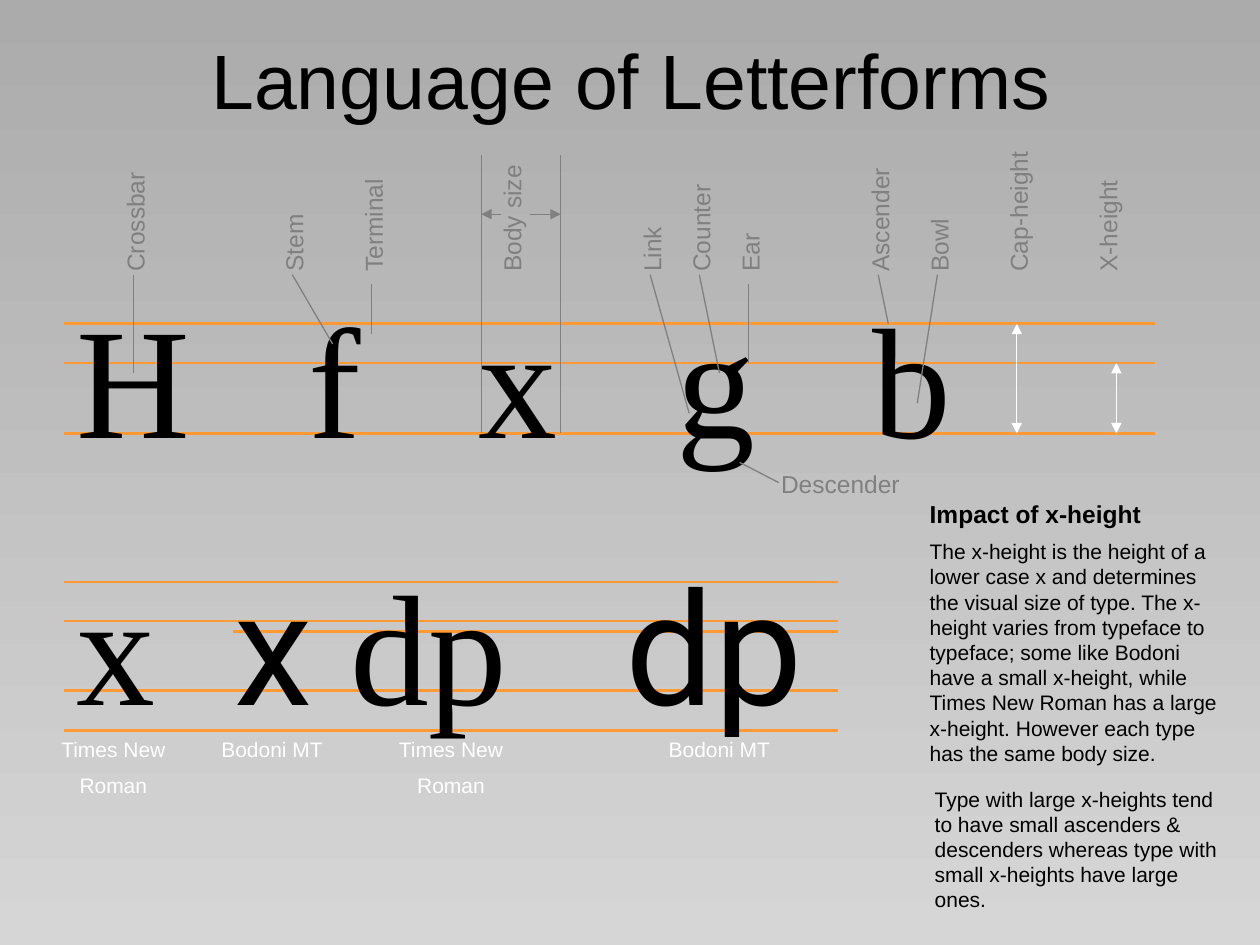
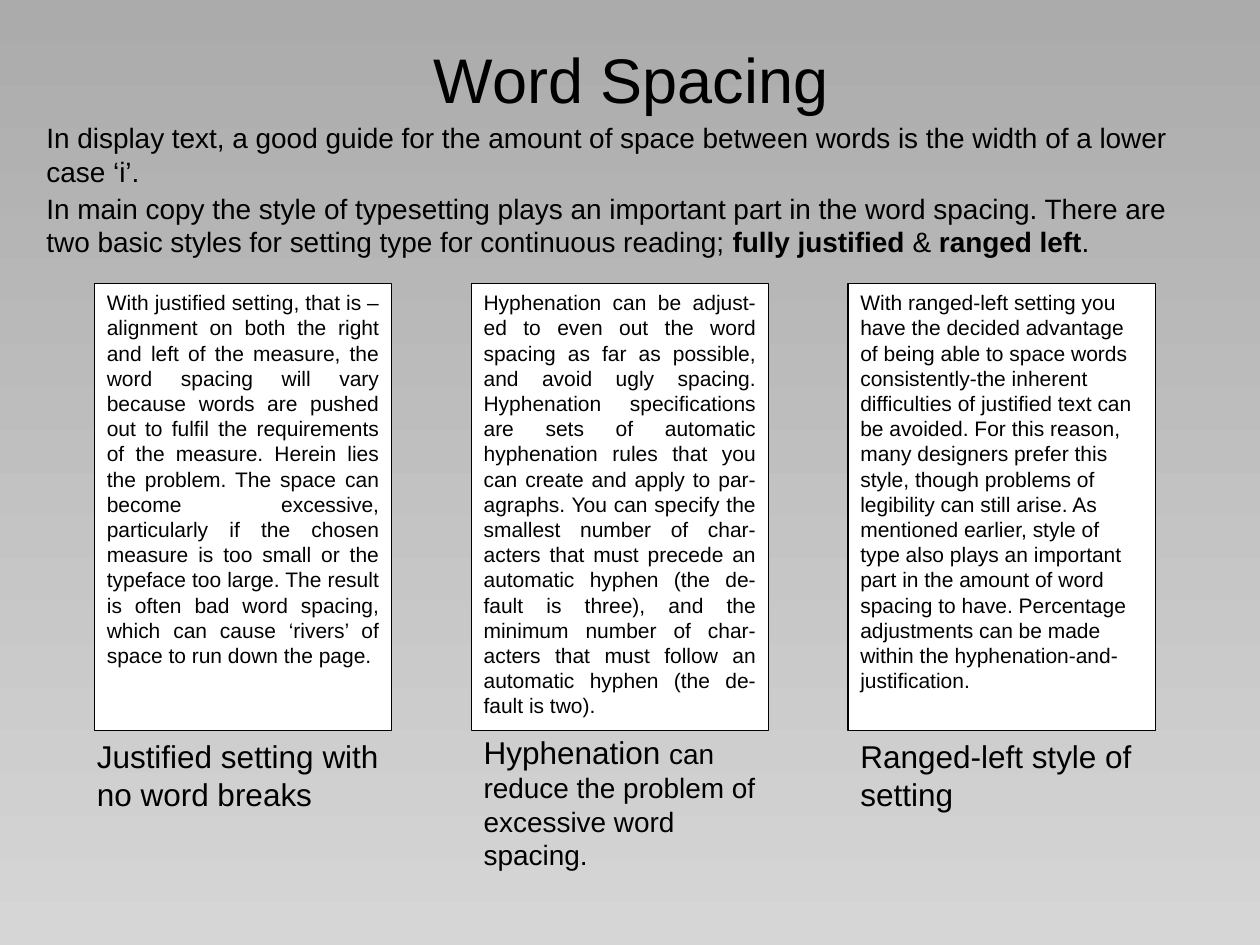
import pptx
import pptx.util
import pptx.dml.color
import pptx.enum.dml
import pptx.enum.shapes
import pptx.enum.text
from dataclasses import dataclass
from lxml import etree
from pptx.util import Inches, Pt

RGBColor = pptx.dml.color.RGBColor
BLACK = RGBColor(0, 0, 0)
WHITE = RGBColor(255, 255, 255)
GREY = RGBColor(0x80, 0x80, 0x80)
ORANGE = RGBColor(0xFF, 0x99, 0x33)
SKY_TOP = RGBColor(0xAB, 0xAB, 0xAB)
SKY_BOTTOM = RGBColor(0xD6, 0xD6, 0xD6)

SANS, SERIF, ROBOTO = "Arial", "Times New Roman", "Roboto"
ALIGN = pptx.enum.text.PP_ALIGN
ANCHOR = pptx.enum.text.MSO_ANCHOR
TITLE_ONLY = 5
LINE_HEIGHT = 1.2
DRAWING_NS = "http://schemas.openxmlformats.org/drawingml/2006/main"


def add_child(parent, tag, **attributes):
    """Append a DrawingML element to its parent."""
    child = etree.SubElement(parent, f"{{{DRAWING_NS}}}{tag}")
    for key, value in attributes.items():
        child.set(key, str(value))
    return child


def write(frame, paragraphs, size=12, color=BLACK, font=SANS, align=ALIGN.LEFT,
          anchor=ANCHOR.TOP, tabs=()):
    """Fill a text frame; a paragraph is a string or a list of (text, format) runs."""
    frame.word_wrap = True
    frame.vertical_anchor = anchor
    for index, content in enumerate(paragraphs):
        paragraph = frame.paragraphs[0] if index == 0 else frame.add_paragraph()
        runs = [(content, {})] if isinstance(content, str) else content
        line_size = runs[-1][1].get("size", size)
        paragraph.alignment = align
        paragraph.line_spacing = Pt(line_size * LINE_HEIGHT)
        paragraph.space_before = Pt(line_size / 2 if index else 0)
        if tabs:
            tab_list = add_child(paragraph._p.get_or_add_pPr(), "tabLst")
            for stop in tabs:
                add_child(tab_list, "tab", pos=Inches(stop), algn="l")
        for text, style in runs:
            run = paragraph.add_run()
            run.text = text
            run.font.name = style.get("font", font)
            run.font.size = Pt(style.get("size", size))
            run.font.bold = style.get("bold", False)
            run.font.color.rgb = color


@dataclass
class Region:
    """A part of a slide whose contents are placed from its top left corner."""
    slide: object
    left: float
    top: float

    def box(self, x, y, width, height):
        """Return the slide position and size of a box in this region."""
        return [Inches(n) for n in (self.left + x, self.top + y, width, height)]

    def text(self, x, y, width, height, *paragraphs, rotation=0, **style):
        """Add a text box."""
        box = self.slide.shapes.add_textbox(*self.box(x, y, width, height))
        box.rotation = rotation
        write(box.text_frame, paragraphs, **style)

    def panel(self, x, y, width, height, *paragraphs, **style):
        """Add a white outlined rectangle with text."""
        panel = self.slide.shapes.add_shape(
            pptx.enum.shapes.MSO_SHAPE.RECTANGLE, *self.box(x, y, width, height))
        panel.shadow.inherit = False
        panel.fill.solid()
        panel.fill.fore_color.rgb = WHITE
        panel.line.color.rgb = BLACK
        panel.line.width = Pt(0.75)
        write(panel.text_frame, paragraphs, **style)

    def line(self, x1, y1, x2, y2, color=GREY, width=0.75, arrows=()):
        """Add a straight line with arrowheads at the named ends."""
        line = self.slide.shapes.add_connector(
            pptx.enum.shapes.MSO_CONNECTOR.STRAIGHT,
            *self.box(x1, y1, self.left + x2, self.top + y2))
        line.line.color.rgb = color
        line.line.width = Pt(width)
        for end in arrows:
            add_child(line.line._get_or_add_ln(), end, type="triangle")
        add_child(line._element.spPr, "effectLst")


def set_background(master):
    """Give every slide the grey gradient."""
    fill = master.background.fill
    fill.gradient()
    fill.gradient_angle = 270
    for stop, color, position in zip(fill.gradient_stops, (SKY_TOP, SKY_BOTTOM), (0, 1)):
        stop.color.rgb = color
        stop.position = position


def add_titled_slide(deck, title, size):
    """Add a slide with the shared title style."""
    slide = deck.slides.add_slide(deck.slide_layouts[TITLE_ONLY])
    heading = slide.shapes.title
    heading.left, heading.top, heading.width, heading.height = (
        Inches(n) for n in (0.51, 0, 9, 1.25))
    write(heading.text_frame, [title], size=size, align=ALIGN.CENTER, anchor=ANCHOR.MIDDLE)
    return slide


def letter_anatomy(region):
    """Draw the labelled letters, measured from the left end of the cap line."""
    x_line, baseline = 0.31, 0.87
    for y in (0, x_line, baseline):
        region.line(0, y, 8.66, y, color=ORANGE, width=1.5)
    region.text(0, -0.39, 8.98, 1.6, "H\tf\tx\tg\tb", size=90, font=SERIF,
                tabs=(1.84, 3.19, 4.76, 6.32))
    region.text(5.59, 1.1, 1.42, 0.33, "Descender", size=14, color=GREY)

    labels = {"Crossbar": 0.56, "Stem": 1.82, "Terminal": 2.45, "Body size": 3.55,
              "Link": 4.66, "Counter": 5.05, "Ear": 5.44, "Ascender": 6.47,
              "Bowl": 6.94, "Cap-height": 7.57, "X-height": 8.28}
    for label, center in labels.items():
        length = 1.34 if label == "Cap-height" else 1.1
        region.text(center - length / 2, -0.32 - length / 2 - 0.16, length, 0.33, label,
                    rotation=270, size=14, color=GREY)

    leaders = [(0.55, -0.39, 0.55, 0.39), (1.81, -0.39, 2.13, 0.16),
               (2.44, -0.32, 2.44, 0.08), (4.65, -0.39, 4.96, 0.71),
               (5.04, -0.39, 5.2, 0.39), (5.43, -0.32, 5.43, x_line),
               (6.46, -0.39, 6.54, 0), (6.93, -0.39, 6.77, 0.63),
               (5.36, 1.1, 5.67, 1.26)]
    for leader in leaders:
        region.line(*leader)
    for edge, arrow_start in ((3.31, 3.47), (3.94, 3.7)):
        region.line(edge, -1.34, edge, baseline)
        region.line(arrow_start, -0.87, edge, -0.87, arrows=["tailEnd"])
    for x, top in ((7.56, 0), (8.35, x_line)):
        region.line(x, top, x, baseline, color=WHITE, arrows=["headEnd", "tailEnd"])


def typeface_comparison(region):
    """Compare two typefaces, measured from the left end of the top guide."""
    for x, y in ((0, 0), (0, 0.31), (1.34, 0.39), (0, 0.86), (0, 1.18)):
        region.line(x, y, 6.14, y, color=ORANGE, width=1.5)
    roboto = {"font": ROBOTO}
    region.text(0, -0.32, 6.3, 1.6,
                [("x\t", {}), ("x\t", roboto), ("dp\t", {}), ("dp", roboto)],
                size=90, font=SERIF, tabs=(1.25, 2.17, 4.36))
    captions = [(-0.24, ["Times New", "Roman"]), (1.02, ["Bodoni MT"]),
                (2.44, ["Times New", "Roman"]), (4.57, ["Bodoni MT"])]
    for x, lines in captions:
        region.text(x, 1.18, 1.26, 0.3 * len(lines), *lines, color=WHITE,
                    align=ALIGN.CENTER)


def x_height_notes(region):
    """Explain the impact of x-height."""
    region.text(0, 0, 2.52, 2.23,
                [("Impact of x-height", {"size": 14, "bold": True})],
                "The x-height is the height of a lower case x and determines the visual "
                "size of type. The x-height varies from typeface to typeface; some like "
                "Bodoni have a small x-height, while Times New Roman has a large x-height. "
                "However each type has the same body size.")
    region.text(0.04, 2.28, 2.48, 1.1,
                "Type with large x-heights tend to have small ascenders & descenders "
                "whereas type with small x-heights have large ones.")


def spacing_introduction(region):
    """Introduce the two styles of typesetting."""
    bold = {"bold": True}
    region.text(0, 0, 9.53, 0.64,
                "In display text, a good guide for the amount of space between words is "
                "the width of a lower case ‘i’.", size=16)
    region.text(0, 0.56, 9.13, 0.64,
                [("In main copy the style of typesetting plays an important part in the "
                  "word spacing. There are two basic styles for setting type for "
                  "continuous reading; ", {}),
                 ("fully justified", bold), (" & ", {}), ("ranged left", bold), (".", {})],
                size=16)


def setting_samples(region):
    """Show three samples of text setting with captions below."""
    pitch, height = 2.99, 3.55
    samples = [
        (2.36, ALIGN.JUSTIFY, -0.08, 0.7, "Justified setting with no word breaks",
         "With justified setting, that is –alignment on both the right and left of the "
         "measure, the word spacing will vary because words are pushed out to fulfil the "
         "requirements of the measure. Herein lies the problem. The space can become "
         "excessive, particularly if the chosen measure is too small or the typeface too "
         "large. The result is often bad word spacing, which can cause ‘rivers’ of space "
         "to run down the page."),
        (2.36, ALIGN.JUSTIFY, 0, 1.2,
         [("Hyphenation ", {}),
          ("can reduce the problem of excessive word spacing.", {"size": 16})],
         "Hyphenation can be adjust-ed to even out the word spacing as far as possible, "
         "and avoid ugly spacing. Hyphenation specifications are sets of automatic "
         "hyphenation rules that you can create and apply to par-agraphs. You can specify "
         "the smallest number of char-acters that must precede an automatic hyphen (the "
         "de-fault is three), and the minimum number of char-acters that must follow an "
         "automatic hyphen (the de-fault is two)."),
        (2.44, ALIGN.LEFT, 0, 0.7, "Ranged-left style of setting",
         "With ranged-left setting you have the decided advantage of being able to space "
         "words consistently-the inherent difficulties of justified text can be avoided. "
         "For this reason, many designers prefer this style, though problems of legibility "
         "can still arise. As mentioned earlier, style of type also plays an important "
         "part in the amount of word spacing to have. Percentage adjustments can be made "
         "within the hyphenation-and-justification."),
    ]
    for column, (width, align, shift, depth, caption, sample) in enumerate(samples):
        x = column * pitch
        region.panel(x, 0, width, height, sample, align=align)
        region.text(x + shift, height, 2.44, depth, caption, size=18)


def main():
    """Build and save the two slides."""
    deck = pptx.Presentation()
    deck.slide_width, deck.slide_height = Inches(10), Inches(7.5)
    set_background(deck.slide_master)

    letterforms = add_titled_slide(deck, "Language of Letterforms", 44)
    letter_anatomy(Region(letterforms, 0.51, 2.57))
    typeface_comparison(Region(letterforms, 0.51, 4.62))
    x_height_notes(Region(letterforms, 7.28, 3.91))

    word_spacing = add_titled_slide(deck, "Word Spacing", 36)
    spacing_introduction(Region(word_spacing, 0.27, 0.91))
    setting_samples(Region(word_spacing, 0.75, 2.25))
    deck.save("out.pptx")


if __name__ == "__main__":
    main()
